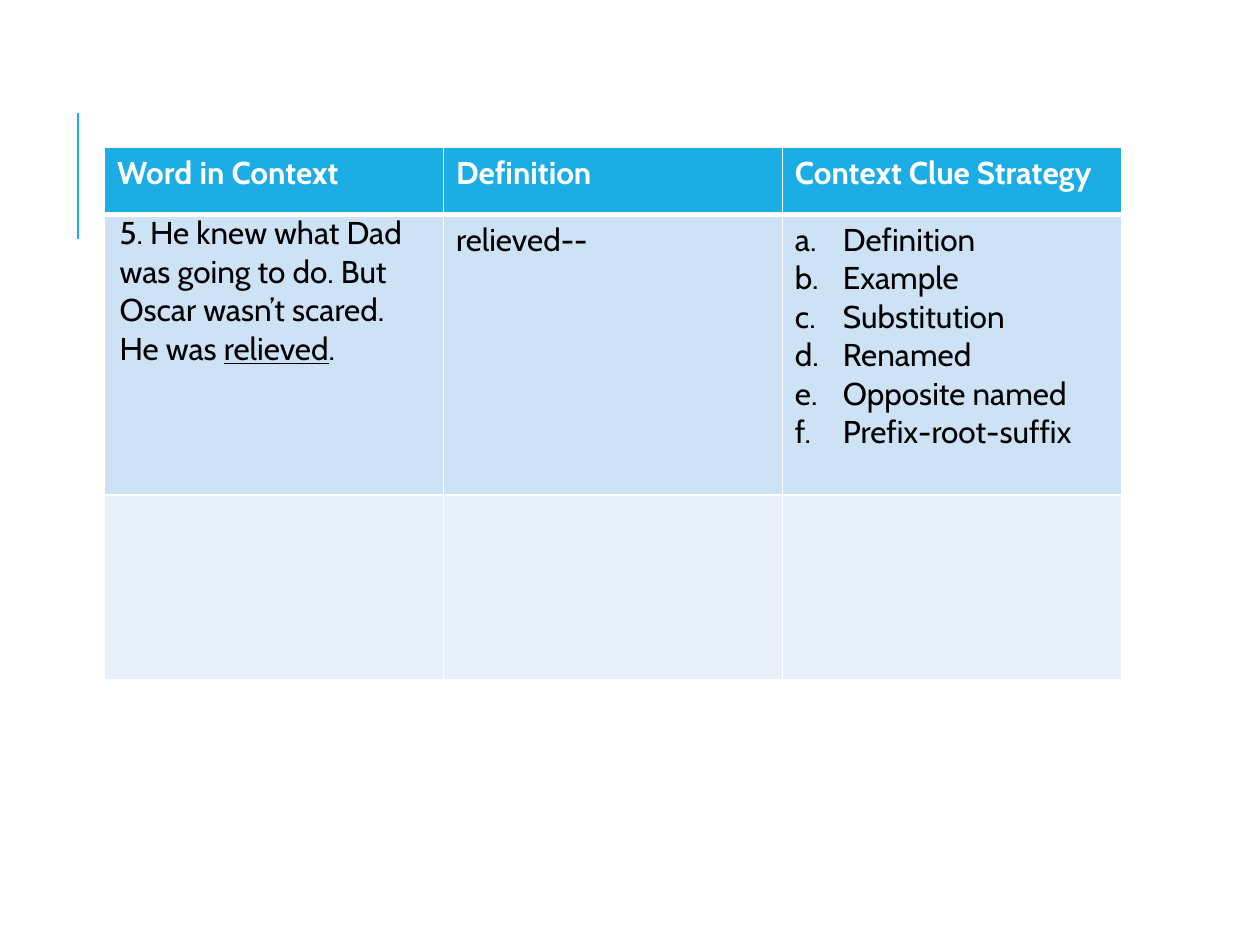
from dataclasses import dataclass

from lxml import etree
from pptx import Presentation
from pptx.dml.color import RGBColor
from pptx.oxml.ns import qn
from pptx.util import Inches, Pt
from pptx.enum import shapes, text

WIDTH, HEIGHT = 10, 7.5
ACCENT, WHITE, BLACK = "1CADE4", "FFFFFF", "000000"
COLUMN_SHARE = 0.269
ROW_SHARES = (0.071, 0.297, 0.195)
TABLE_LEFT, TABLE_TOP = 0.083, 0.156
RULE_X, RULE_TOP, RULE_BOTTOM = 0.062, 0.12, 0.253


@dataclass(frozen=True)
class Span:
    words: str
    underline: bool = False


@dataclass(frozen=True)
class Entry:
    lines: tuple[tuple[Span, ...], ...] = ()
    lettered: bool = False
    margins: tuple[float, float] = (0.1, 0.05)
    space_after: float = 0


@dataclass(frozen=True)
class Band:
    entries: tuple[Entry, ...]
    fill: str
    color: str = BLACK
    bold: bool = False
    bottom_border: float = 1


def plain(*lines: str, lettered: bool = False) -> Entry:
    return Entry(tuple((Span(line),) for line in lines), lettered)


BANDS = (
    Band((plain("Word in Context"), plain("Definition"), plain("Context Clue Strategy")),
         ACCENT, WHITE, True, 3),
    Band((
        Entry(((
            Span("5. He knew what Dad was going to do. But Oscar wasn’t scared. He was "),
            Span("relieved", True),
            Span("."),
        ),), margins=(0.12, 0), space_after=11.2),
        plain("relieved--"),
        plain("Definition", "Example", "Substitution", "Renamed", "Opposite named",
              "Prefix-root-suffix", lettered=True),
    ), "CDE3F5"),
    Band((Entry(),) * 3, "E8F1FA"),
)


def across(share: float) -> int:
    return Inches(WIDTH * share)


def down(share: float) -> int:
    return Inches(HEIGHT * share)


def paint(color_format, color: str) -> None:
    color_format.rgb = RGBColor.from_string(color)


def set_values(target, values: dict) -> None:
    for name, value in values.items():
        setattr(target, name, value)


def add_letter(para) -> None:
    properties = para._p.get_or_add_pPr()
    properties.set("marL", str(Inches(0.38)))
    properties.set("indent", str(-Inches(0.38)))
    etree.SubElement(properties, qn("a:buFont"), typeface="+mj-lt")
    etree.SubElement(properties, qn("a:buAutoNum"), type="alphaLcPeriod")


def add_borders(cell, widths: dict[str, float]) -> None:
    properties = cell._tc.get_or_add_tcPr()
    for index, (side, width) in enumerate(widths.items()):
        border = etree.Element(qn(f"a:ln{side}"), w=str(Pt(width)))
        fill = etree.SubElement(border, qn("a:solidFill"))
        etree.SubElement(fill, qn("a:srgbClr"), val=WHITE)
        properties.insert(index, border)


def write_entry(cell, entry: Entry, band: Band) -> None:
    side, top = (Inches(margin) for margin in entry.margins)
    set_values(cell, {
        "margin_left": side, "margin_right": side,
        "margin_top": top, "margin_bottom": top,
        "vertical_anchor": text.MSO_ANCHOR.TOP,
    })
    cell.fill.solid()
    paint(cell.fill.fore_color, band.fill)
    frame = cell.text_frame
    for index, line in enumerate(entry.lines):
        para = frame.add_paragraph() if index else frame.paragraphs[0]
        para.space_after = Pt(entry.space_after)
        if entry.lettered:
            add_letter(para)
        for span in line:
            run = para.add_run()
            run.text = span.words
            set_values(run.font, {
                "name": "Cabin", "size": Pt(18),
                "bold": band.bold, "underline": span.underline,
            })
            paint(run.font.color, band.color)


def add_rule(page) -> None:
    rule = page.shapes.add_connector(
        shapes.MSO_CONNECTOR.STRAIGHT,
        across(RULE_X), down(RULE_BOTTOM), across(RULE_X), down(RULE_TOP))
    paint(rule.line.color, ACCENT)
    rule.line.width = Pt(1.5)
    etree.SubElement(rule._element.spPr, qn("a:effectLst"))


def add_clue_table(page) -> None:
    columns = len(BANDS[0].entries)
    table = page.shapes.add_table(
        len(BANDS), columns, across(TABLE_LEFT), down(TABLE_TOP),
        across(COLUMN_SHARE * columns), down(sum(ROW_SHARES))).table
    for column in table.columns:
        column.width = across(COLUMN_SHARE)
    top_border = 1
    for row, (band, share) in enumerate(zip(BANDS, ROW_SHARES)):
        table.rows[row].height = down(share)
        for column, entry in enumerate(band.entries):
            cell = table.cell(row, column)
            write_entry(cell, entry, band)
            add_borders(cell, {"L": 1, "R": 1, "T": top_border, "B": band.bottom_border})
        top_border = band.bottom_border


def main() -> None:
    deck = Presentation()
    set_values(deck, {"slide_width": Inches(WIDTH), "slide_height": Inches(HEIGHT)})
    page = deck.slides.add_slide(deck.slide_layouts[6])
    add_rule(page)
    add_clue_table(page)
    deck.save("out.pptx")


if __name__ == "__main__":
    main()
